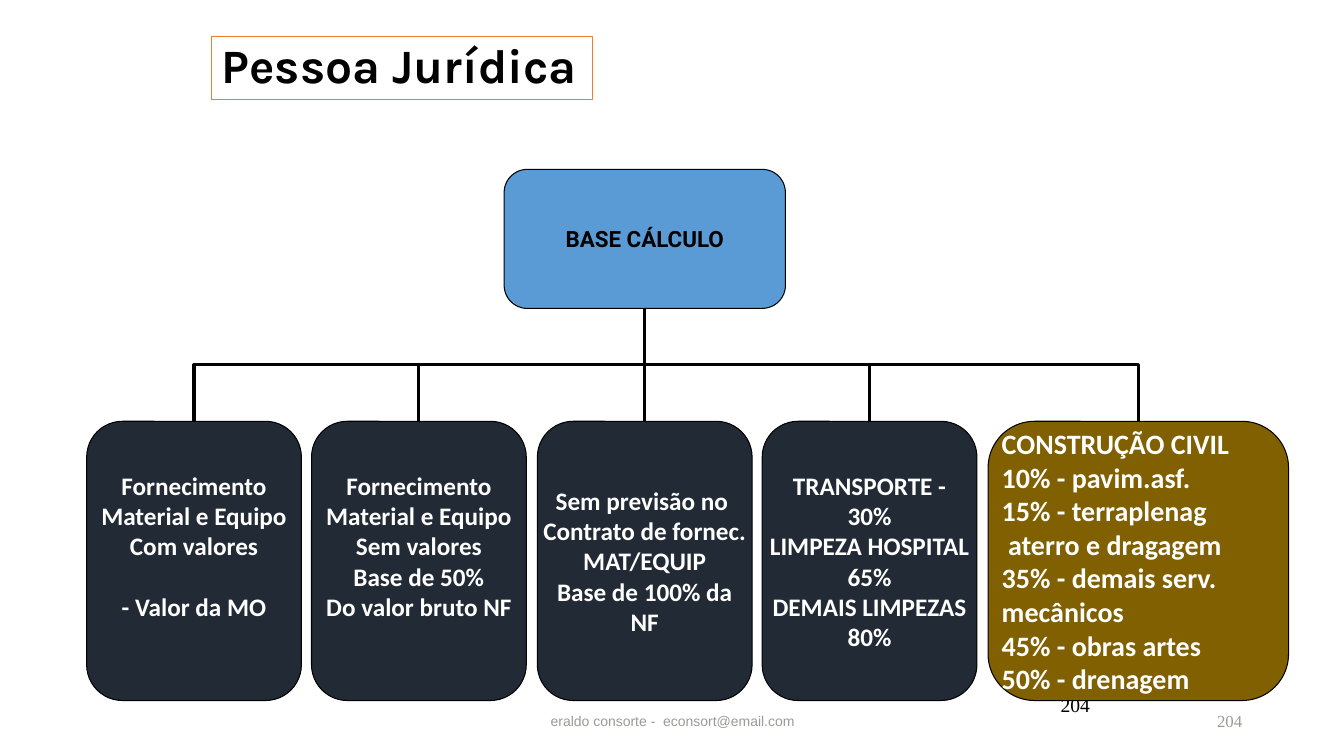
from pptx import Presentation
from pptx.dml.color import RGBColor
from pptx.enum.shapes import MSO_CONNECTOR, MSO_SHAPE
from pptx.enum.text import MSO_ANCHOR, PP_ALIGN
from pptx.oxml.ns import qn
from pptx.util import Pt
from lxml.etree import SubElement

PX = 9144
LEFT, CENTER, RIGHT = PP_ALIGN.LEFT, PP_ALIGN.CENTER, PP_ALIGN.RIGHT
TOP, MIDDLE = MSO_ANCHOR.TOP, MSO_ANCHOR.MIDDLE


def color(value):
    return RGBColor.from_string(value)


def write(shape, lines, font, ink, align, frame_format):
    frame = shape.text_frame
    for name, value in frame_format.items():
        setattr(frame, name, value)
    frame.text = "\n".join(lines)
    for paragraph in frame.paragraphs:
        paragraph.alignment = align
        for name, value in font.items():
            setattr(paragraph.runs[0].font, name, value)
        paragraph.runs[0].font.color.rgb = color(ink)
    return frame


prs = Presentation()
prs.slide_width, prs.slide_height = 1333 * PX, 750 * PX
slide = prs.slides.add_slide(prs.slide_layouts[6])
shapes = slide.shapes

headings = [
    ("Pessoa Jurídica", (210, 36, 378, 63), "Karla", 34.2, True, "000000", LEFT, MIDDLE),
    ("eraldo consorte -  econsort@email.com", (442, 695, 450, 40), "Arial", 10, False, "9B9A98", CENTER, MIDDLE),
    ("204", (942, 695, 300, 40), "Times New Roman", 12, False, "9B9A98", RIGHT, MIDDLE),
    ("204", (883, 683, 208, 50), "Times New Roman", 14, False, "000000", RIGHT, TOP),
]
labels = []
for text, box, face, size, bold, ink, align, anchor in headings:
    label = shapes.add_textbox(*(n * PX for n in box))
    font = {"name": face, "size": Pt(size), "bold": bold}
    write(label, [text], font, ink, align, {"word_wrap": True, "vertical_anchor": anchor})
    labels.append(label)
title = labels[0]
title.line.color.rgb = color("ED7D31")
title.line.width = Pt(0.75)
title.text_frame.paragraphs[0].line_spacing = 0.9

NAVY, GOLD = "222A35", "806000"
ROW_TOP, ROW_HEIGHT, FIRST_LEFT, DOUBLE_PITCH = 418, 277, 86, 447
branches = [
    (["Fornecimento", "Material e Equipo", "Com valores", "- Valor da MO"], 213, NAVY, 18, CENTER, 30),
    (["Fornecimento", "Material e Equipo", "Sem valores", "Base de 50%", "Do valor bruto NF"], 213, NAVY, 18, CENTER, 30),
    (["Sem previsão no ", "Contrato de fornec.", "MAT/EQUIP", "Base de 100% da", "NF"], 213, NAVY, 18, CENTER, 0),
    (["TRANSPORTE -", "30%", "LIMPEZA HOSPITAL", "65%", "DEMAIS LIMPEZAS", "80%"], 213, NAVY, 18, CENTER, 0),
    (["CONSTRUÇÃO CIVIL", "10% - pavim.asf.", "15% - terraplenag", " aterro e dragagem", "35% - demais serv.",
      "mecânicos", "45% - obras artes", "50% - drenagem"], 298, GOLD, 20, LEFT, 0),
]
boxes = [(["BASE CÁLCULO"], (500, 168, 279, 138), "5B9BD5", "Roboto", 16, "000000", CENTER, 0)]
for i, (lines, width, fill, size, align, bottom) in enumerate(branches):
    place = (FIRST_LEFT + i * DOUBLE_PITCH // 2, ROW_TOP, width, ROW_HEIGHT)
    boxes.append((lines, place, fill, "Calibri", size, "FFFFFF", align, bottom))

nodes = []
for lines, place, fill, face, size, ink, align, bottom in boxes:
    node = shapes.add_shape(MSO_SHAPE.ROUNDED_RECTANGLE, *(n * PX for n in place))
    node.shadow.inherit = False
    node.fill.solid()
    node.fill.fore_color.rgb = color(fill)
    node.line.color.rgb = color("000000")
    node.line.width = Pt(0.75)
    frame_format = {"word_wrap": False, "vertical_anchor": MIDDLE, "margin_left": 0, "margin_top": 0,
                    "margin_right": 0, "margin_bottom": bottom * PX}
    write(node, lines, {"name": face, "size": Pt(size), "bold": True}, ink, align, frame_format)
    nodes.append(node)

root, *children = nodes
children[0].text_frame.paragraphs[-1].space_before = Pt(22)

for child in children:
    link = shapes.add_connector(MSO_CONNECTOR.ELBOW, 0, 0, 0, 0)
    link.begin_connect(child, 0)
    link.end_connect(root, 2)
    center_x = (link.begin_x + link.end_x) // 2
    center_y = (link.begin_y + link.end_y) // 2
    span, rise = abs(link.end_x - link.begin_x), link.begin_y - link.end_y
    on_left = link.begin_x < link.end_x
    turned = {"left": center_x - rise // 2, "top": center_y - span // 2, "width": rise, "height": span}
    for name, value in turned.items():
        setattr(link, name, value)
    turn = {"rot": "5400000" if on_left else "16200000", "flipH": "1" if on_left else "0", "flipV": "1"}
    properties = link._element.spPr
    for name, value in turn.items():
        properties.find(qn("a:xfrm")).set(name, value)
    link.line.color.rgb = color("000000")
    link.line.width = Pt(2.25)
    SubElement(properties, qn("a:effectLst"))

prs.save("out.pptx")
